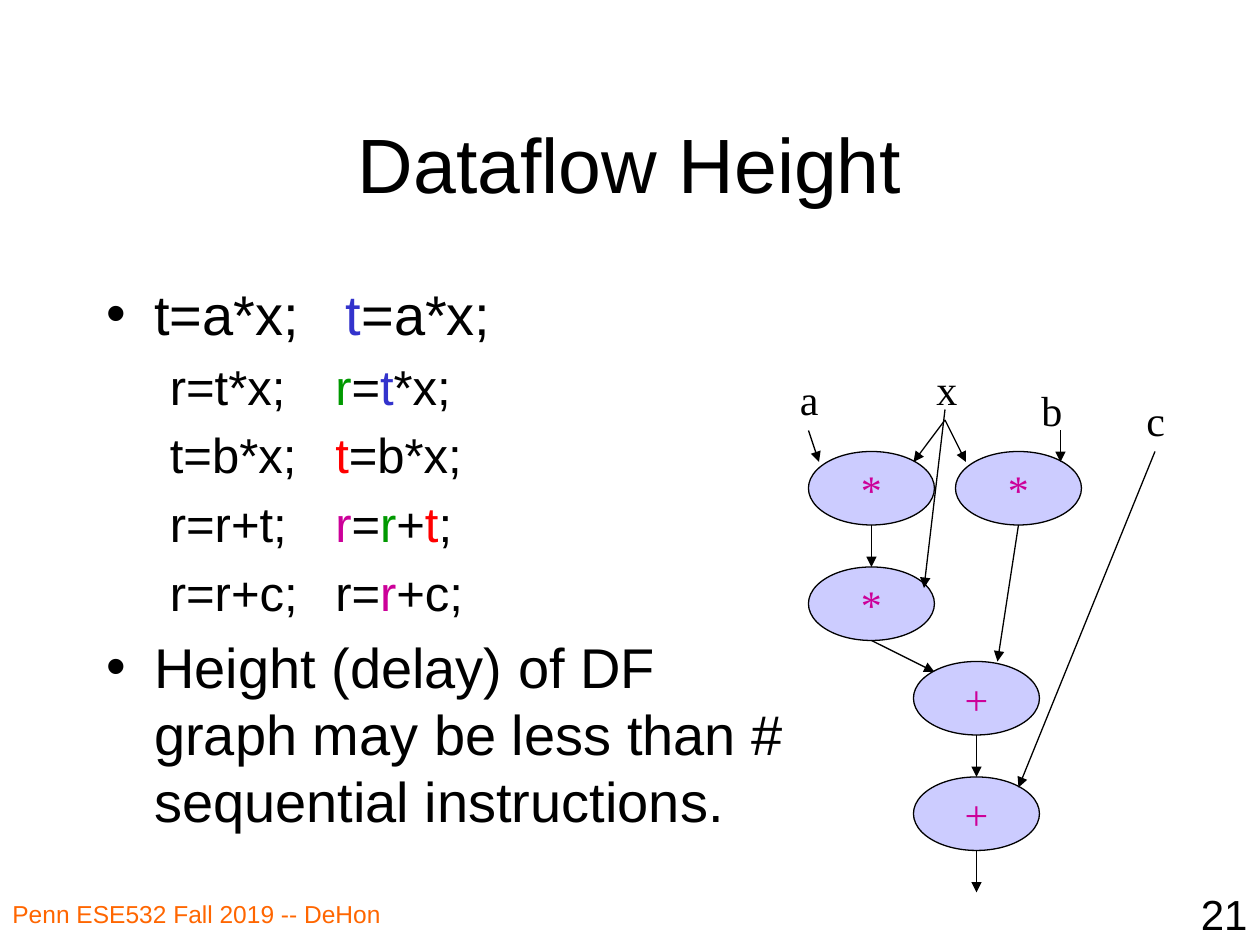
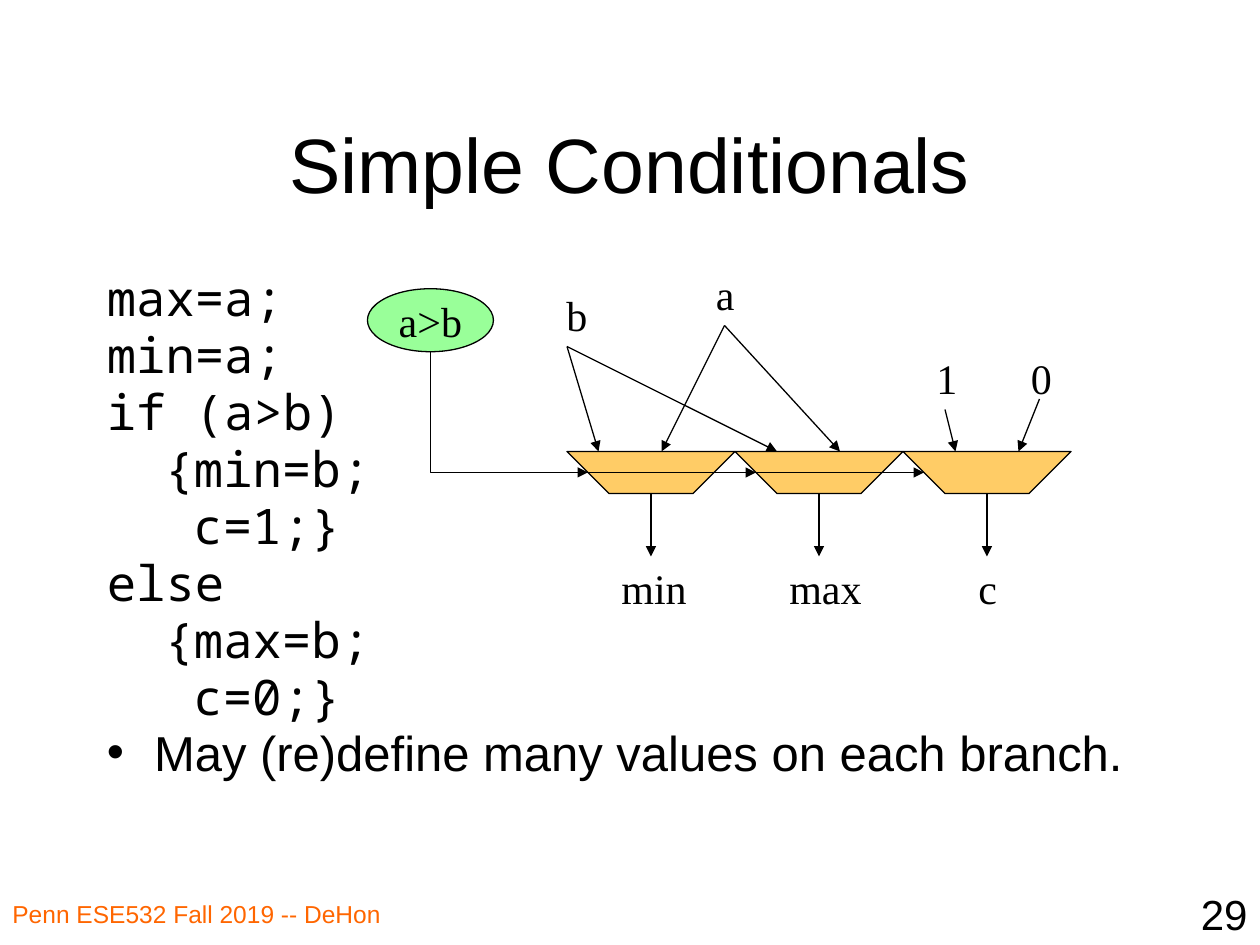
from lxml.etree import SubElement
from pptx import Presentation
from pptx.dml.color import RGBColor
from pptx.enum.shapes import MSO_CONNECTOR as Route, MSO_SHAPE as Preset
from pptx.enum.text import MSO_ANCHOR as Anchor, PP_ALIGN as Align
from pptx.oxml.ns import qn
from pptx.util import Emu, Pt

PX = 9525
SANS, SERIF, MONO = "Arial", "Times New Roman", "Noto Sans Mono"
BLACK, ORANGE, MAGENTA = "000000", "FF6600", "CC0099"
BLUE, GREEN, RED = "3333CC", "009900", "FF0000"
LILAC, MINT, AMBER = "CCCCFF", "99FF99", "FFCC66"
HANG, CODE_CHAR = 36, 22
MUX_WIDTH, MUX_HEIGHT, MUX_TOP = 128, 32, 344


def px(*lengths):
    """Turn pixel lengths into EMU."""
    return [Emu(length * PX) for length in lengths]


def rgb(color):
    """Turn a hex string into a colour."""
    return RGBColor.from_string(color)


def set_font(target, size, face=SANS, color=BLACK):
    """Set the font of a paragraph or run."""
    target.font.size = Pt(size)
    target.font.name = face
    target.font.color.rgb = rgb(color)


def write(shape, text, size, face=SANS, color=BLACK, align=Align.LEFT, wrap=True):
    """Put one uniformly formatted paragraph into a shape."""
    frame = shape.text_frame
    frame.word_wrap = wrap
    line = frame.paragraphs[0]
    line.text = text
    line.alignment = align
    set_font(line, size, face, color)


def add_label(slide, text, left, top, width=34):
    """Name a value of the diagram."""
    label = slide.shapes.add_textbox(*px(left, top, width, 48))
    write(label, text, 24, SERIF, wrap=False)


def outline(shape, fill):
    """Give a diagram shape its fill and thin black line."""
    shape.shadow.inherit = False
    shape.fill.solid()
    shape.fill.fore_color.rgb = rgb(fill)
    shape.line.color.rgb = rgb(BLACK)
    shape.line.width = Pt(0.75)


def add_operator(slide, text, left, top, height, fill, color):
    """Draw an oval operator node."""
    node = slide.shapes.add_shape(Preset.OVAL, *px(left, top, 96, height))
    outline(node, fill)
    write(node, text, 24, SERIF, color, Align.CENTER, wrap=False)
    node.text_frame.vertical_anchor = Anchor.MIDDLE


def add_arrow(slide, start, end, route=Route.STRAIGHT, tip="a:tailEnd"):
    """Draw a thin black arrow between two points."""
    arrow = slide.shapes.add_connector(route, *px(*start, *end))
    arrow.line.color.rgb = rgb(BLACK)
    arrow.line.width = Pt(0.75)
    properties = arrow._element.spPr
    SubElement(properties.find(qn("a:ln")), qn(tip), type="triangle")
    SubElement(properties, qn("a:effectLst"))
    return arrow


def add_corner_arrow(slide, start, end):
    """Draw an arrow that goes down and then right."""
    arrow = add_arrow(slide, end, start, Route.ELBOW, "a:headEnd")
    arrow._element.spPr.find(qn("a:prstGeom")).set("prst", "bentConnector2")


def add_mux(slide, left):
    """Draw a multiplexer as a trapezoid narrowing downwards."""
    right, bottom = left + MUX_WIDTH, MUX_TOP + MUX_HEIGHT
    builder = slide.shapes.build_freeform(left, MUX_TOP, scale=PX)
    corners = [(left + 32, bottom), (right - 32, bottom), (right, MUX_TOP)]
    builder.add_line_segments(corners, close=True)
    outline(builder.convert_to_shape(), AMBER)


def add_body(slide, width, height):
    """Add the main text area and return its frame."""
    frame = slide.shapes.add_textbox(*px(72, 208, width, height)).text_frame
    frame.word_wrap = True
    return frame


def add_line(frame, runs, size, face=SANS, left=HANG, hang=HANG, bullet=False, tab=None):
    """Append a paragraph of (text, colour) runs with a hanging indent."""
    first = frame.paragraphs[0]
    line = first if not first.runs else frame.add_paragraph()
    line.space_before = Pt(size * 0.2)
    for text, color in runs:
        run = line.add_run()
        run.text = text
        set_font(run, size, face, color)
    properties = line._p.get_or_add_pPr()
    properties.set("marL", str(left * PX))
    properties.set("indent", str(-hang * PX))
    if bullet:
        SubElement(properties, qn("a:buFont"), typeface=SANS)
        SubElement(properties, qn("a:buChar"), char="•")
    else:
        SubElement(properties, qn("a:buNone"))
    if tab:
        stops = SubElement(properties, qn("a:tabLst"))
        SubElement(stops, qn("a:tab"), pos=str(tab * PX), algn="l")
    return line


def add_slide(deck, heading, number):
    """Start a slide with its title, course footer and page number."""
    slide = deck.slides.add_slide(deck.slide_layouts[5])
    title = slide.shapes.title
    title.left, title.top, title.width, title.height = px(72, 64, 816, 120)
    write(title, heading, 44, align=Align.CENTER)
    title.text_frame.vertical_anchor = Anchor.MIDDLE
    course = slide.shapes.add_textbox(*px(0, 680, 368, 40))
    write(course, "Penn ESE532 Fall 2019 -- DeHon", 14, color=ORANGE)
    page = slide.shapes.add_textbox(*px(760, 672, 200, 48))
    write(page, number, 24, align=Align.RIGHT)
    return slide


def build_dataflow(deck):
    """Build the slide on the height of a dataflow graph."""
    slide = add_slide(deck, "Dataflow Height", "21")
    body = add_body(slide, 544, 456)
    add_line(body, [("t=a*x;\t", BLACK), ("t", BLUE), ("=a*x;", BLACK)], 32,
             bullet=True, tab=182)
    statements = [
        ("r=t*x;", 178, [("r", GREEN), ("=", BLACK), ("t", BLUE), ("*x;", BLACK)]),
        ("t=b*x;", 352, [("t", RED), ("=b*x;", BLACK)]),
        ("r=r+t;", 262, [("r", MAGENTA), ("=", BLACK), ("r", GREEN), ("+", BLACK),
                         ("t", RED), (";", BLACK)]),
        ("r=r+c;", 259, [("r=", BLACK), ("r", MAGENTA), ("+c;", BLACK)]),
    ]
    for plain, tab, colored in statements:
        line = add_line(body, [(plain + "\t", BLACK)] + colored, 28,
                        left=78, hang=30, tab=tab)
        line.level = 1
    conclusion = "Height (delay) of DF graph may be less than # sequential instructions."
    add_line(body, [(conclusion, BLACK)], 32, bullet=True)

    operators = [("*", 616, 344), ("*", 728, 344), ("*", 616, 432),
                 ("+", 696, 504), ("+", 696, 592)]
    for symbol, left, top in operators:
        add_operator(slide, symbol, left, top, 56, LILAC, MAGENTA)
    for name, left, top in [("a", 600, 280), ("x", 704, 272), ("b", 784, 288), ("c", 864, 296)]:
        add_label(slide, name, left, top)
    flows = [
        ((664, 400), (664, 432)), ((744, 560), (744, 592)), ((664, 488), (712, 512)),
        ((776, 400), (760, 504)), ((744, 648), (744, 680)), ((880, 344), (776, 600)),
        ((808, 328), (808, 352)), ((720, 320), (696, 352)), ((720, 320), (736, 352)),
        ((720, 312), (704, 448)), ((616, 328), (624, 352)),
    ]
    for start, end in flows:
        add_arrow(slide, start, end)


def build_conditionals(deck):
    """Build the slide on conditionals turned into multiplexers."""
    slide = add_slide(deck, "Simple Conditionals", "29")
    body = add_body(slide, 816, 432)
    code = [("max=a;", 0), ("min=a;", 0), ("if (a>b)", 0), ("{min=b;", 2), ("c=1;}", 3),
            ("else", 0), ("{max=b;", 2), ("c=0;}", 3)]
    for statement, depth in code:
        line = add_line(body, [(statement, BLACK)], 28, MONO, left=HANG + depth * CODE_CHAR)
        line.line_spacing = 0.8
    remark = [("May (re)define many values on each branch.", BLACK)]
    add_line(body, remark, 28, bullet=True).line_spacing = 0.8

    add_operator(slide, "a>b", 280, 220, 48, MINT, BLACK)
    add_corner_arrow(slide, (328, 268), (448, 360))
    muxes = [432 + MUX_WIDTH * column for column in range(3)]
    for left in muxes:
        middle = left + MUX_WIDTH // 2
        add_arrow(slide, (middle, 368), (middle, 424))
        add_mux(slide, left)
    for left in muxes[1:]:
        add_arrow(slide, (360, 360), (left + 16, 360))
    inputs = [((432, 264), 456), ((432, 264), 592), ((552, 248), 504), ((552, 248), 640),
              ((720, 312), 728), ((792, 304), 776)]
    for start, target in inputs:
        add_arrow(slide, start, (target, MUX_TOP))
    labels = [("b", 422, 216, 36), ("a", 536, 200, 34), ("1", 704, 264, 36),
              ("0", 776, 264, 36), ("min", 464, 424, 69), ("max", 592, 424, 74),
              ("c", 736, 424, 34)]
    for label in labels:
        add_label(slide, *label)


def main():
    """Build and save both slides."""
    deck = Presentation()
    deck.slide_width, deck.slide_height = px(960, 720)
    build_dataflow(deck)
    build_conditionals(deck)
    deck.save("out.pptx")


if __name__ == "__main__":
    main()
